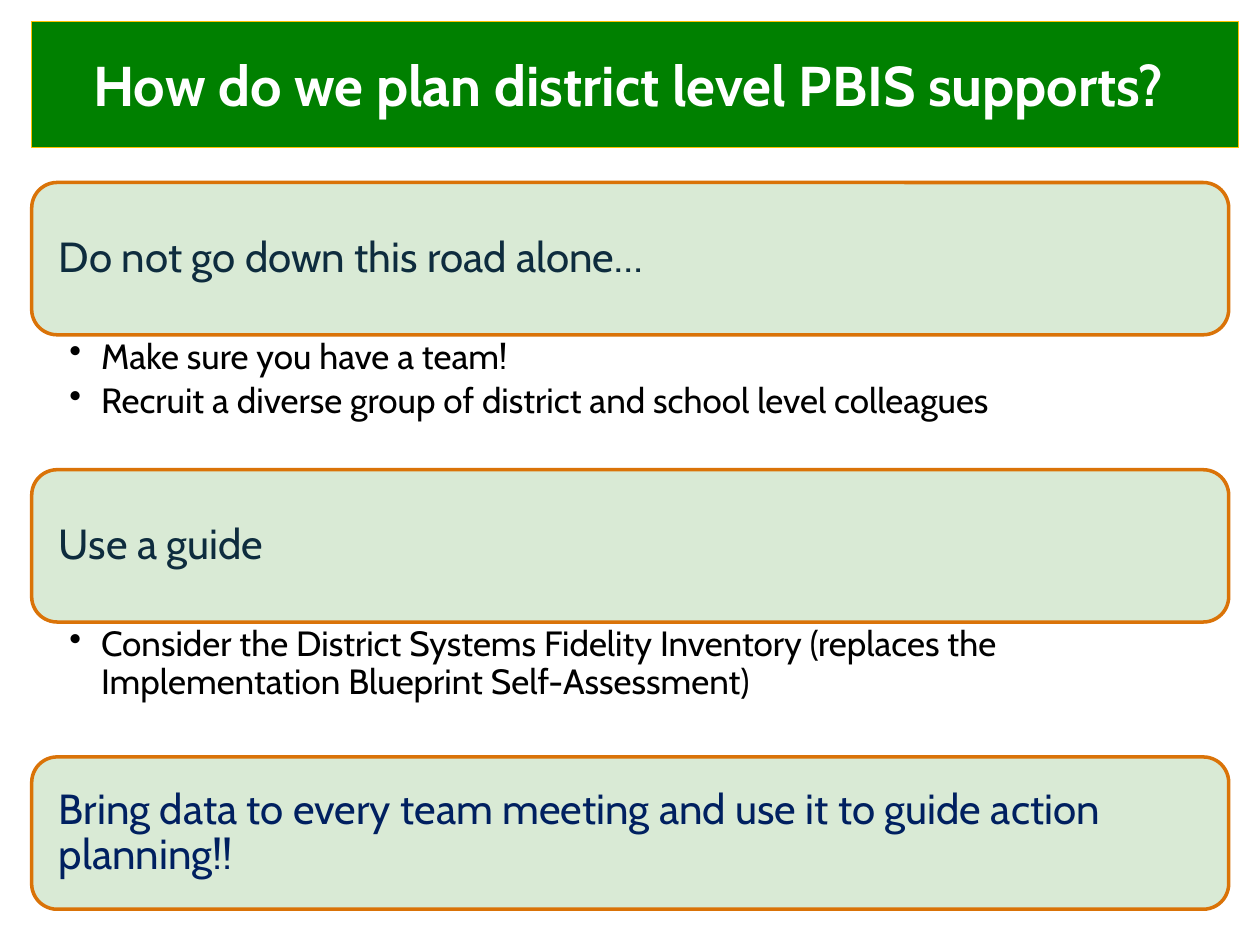
"""Build a slide of three planning steps under a title banner."""
from dataclasses import dataclass

from lxml.etree import SubElement
from pptx import Presentation
from pptx.dml.color import RGBColor as Rgb
from pptx.enum.shapes import MSO_SHAPE as Kind
from pptx.enum.text import MSO_ANCHOR as Anchor, MSO_AUTO_SIZE as Fit, PP_ALIGN as Align
from pptx.oxml.ns import qn
from pptx.util import Cm, Pt


@dataclass(frozen=True)
class Theme:
    """Colours, font and type sizes of the slide."""
    font: str = "Cabin"
    green: str = "008000"
    gold: str = "FFC000"
    pale: str = "D9EAD5"
    rust: str = "DA7308"
    ink: str = "0E2C3E"
    navy: str = "002060"
    black: str = "000000"
    white: str = "FFFFFF"
    title: int = 32
    head: int = 24
    body: int = 20


THEME = Theme()
LEFT, WIDTH = 0.64, 24.13
TOP, CARD, NOTE = 3.68, 3.07, 2.72
STEPS = [
    ("Do not go down this road alone…", THEME.ink,
     ["Make sure you have a team!",
      "Recruit a diverse group of district and school level colleagues"]),
    ("Use a guide", THEME.ink,
     ["Consider the District Systems Fidelity Inventory "
      "(replaces the Implementation Blueprint Self-Assessment)"]),
    ("Bring data to every team meeting and use it to guide action planning!!",
     THEME.navy, []),
]


def paint(shape, fill, line, width):
    """Set the fill and outline of a shape."""
    shape.fill.solid()
    shape.fill.fore_color.rgb = Rgb.from_string(fill)
    shape.line.color.rgb = Rgb.from_string(line)
    shape.line.width = Pt(width)


def add_dot(para):
    """Give a paragraph a hanging bullet."""
    props = para._p.get_or_add_pPr()
    props.set("marL", str(Cm(0.64)))
    props.set("indent", str(Cm(-0.64)))
    SubElement(props, qn("a:buChar"), char="•")


def write(shape, *lines, size, color, bold=False, align=Align.LEFT,
          anchor=Anchor.MIDDLE, inset=(0.25, 0.13, 0.25, 0.13),
          space=0.9, after=0, dots=False):
    """Fill a shape with formatted paragraphs."""
    frame = shape.text_frame
    frame.word_wrap = True
    frame.auto_size = Fit.NONE
    frame.vertical_anchor = anchor
    (frame.margin_left, frame.margin_top,
     frame.margin_right, frame.margin_bottom) = map(Cm, inset)
    for i, line in enumerate(lines):
        para = frame.add_paragraph() if i else frame.paragraphs[0]
        para.alignment = align
        para.line_spacing = space
        para.space_after = Pt(after)
        if dots:
            add_dot(para)
        run = para.add_run()
        run.text = line
        font = run.font
        font.name, font.size, font.bold = THEME.font, Pt(size), bold
        font.color.rgb = Rgb.from_string(color)


def add_title(slide, text):
    """Format the title placeholder as a banner."""
    title = slide.shapes.title
    title.left, title.top = Cm(LEFT), Cm(0.43)
    title.width, title.height = Cm(24.33), Cm(2.54)
    paint(title, THEME.green, THEME.gold, 0.75)
    write(title, text, size=THEME.title, color=THEME.white, bold=True,
          align=Align.CENTER, space=1.0)


def add_card(slide, top, text, color):
    """Add a rounded card with a step heading."""
    card = slide.shapes.add_shape(
        Kind.ROUNDED_RECTANGLE, Cm(LEFT), Cm(top), Cm(WIDTH), Cm(CARD))
    card.shadow.inherit = False
    paint(card, THEME.pale, THEME.rust, 2)
    write(card, text, size=THEME.head, color=color, inset=(0.4, 0.4, 0.4, 0.4))


def add_notes(slide, top, lines):
    """Add the bulleted lines below a card."""
    box = slide.shapes.add_textbox(Cm(LEFT), Cm(top), Cm(WIDTH), Cm(NOTE))
    write(box, *lines, size=THEME.body, color=THEME.black, anchor=Anchor.TOP,
          inset=(0.76, 0.08, 0.41, 0.08), after=4, dots=True)


def main():
    """Build and save the slide."""
    deck = Presentation()
    deck.slide_width, deck.slide_height = Cm(25.4), Cm(19.05)
    slide = deck.slides.add_slide(deck.slide_layouts[5])
    add_title(slide, "How do we plan district level PBIS supports? ")
    for i, (head, color, lines) in enumerate(STEPS):
        top = TOP + i * (CARD + NOTE)
        add_card(slide, top, head, color)
        if lines:
            add_notes(slide, top + CARD, lines)
    deck.save("out.pptx")


if __name__ == "__main__":
    main()
